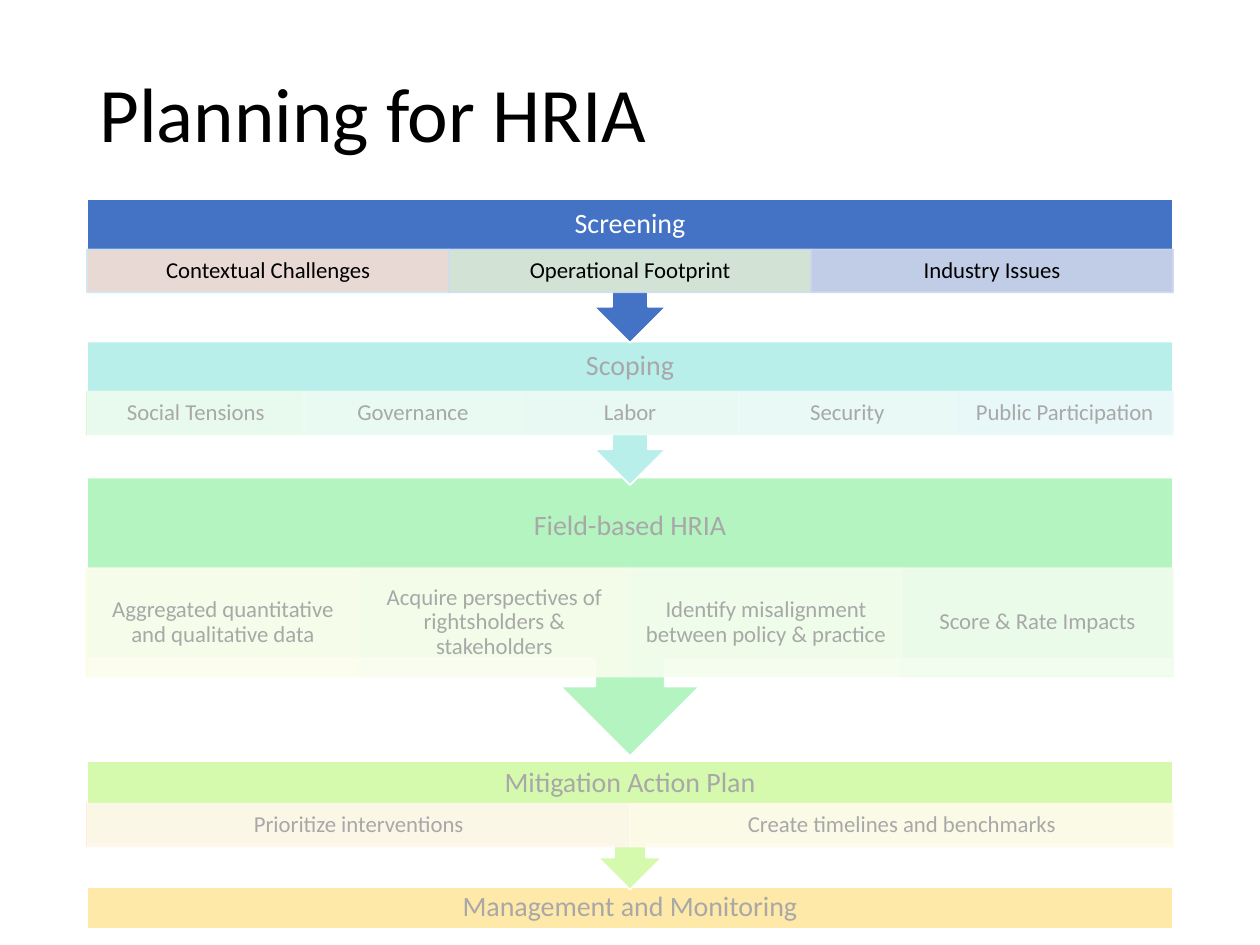
from lxml import etree
from pptx import Presentation
from pptx.dml.color import RGBColor
from pptx.enum.shapes import MSO_SHAPE
from pptx.enum.text import MSO_ANCHOR, PP_ALIGN
from pptx.oxml.ns import qn
from pptx.util import Inches, Pt

RECT = MSO_SHAPE.RECTANGLE
CALLOUT = MSO_SHAPE.UP_ARROW_CALLOUT
MIDDLE = MSO_ANCHOR.MIDDLE
LEFT_ALIGN = PP_ALIGN.LEFT
CENTER = PP_ALIGN.CENTER
LEFT, WIDTH = 0.69, 8.62


def paint(fill, color):
    fill.solid()
    fill.fore_color.rgb = RGBColor.from_string(color)


def write(sp, text, size=16, color="000000", align=CENTER, inset=(0.12, 0.12)):
    tf = sp.text_frame
    tf.word_wrap = True
    tf.vertical_anchor = MIDDLE
    tf.margin_left = tf.margin_right = Inches(inset[0])
    tf.margin_top = tf.margin_bottom = Inches(inset[1])
    p = tf.paragraphs[0]
    p.alignment = align
    p.line_spacing = 0.9
    r = p.add_run()
    r.text = text
    r.font.size = Pt(size)
    r.font.name = "Calibri"
    paint(r.font.fill, color)


prs = Presentation()
prs.slide_width, prs.slide_height = Inches(10), Inches(7.5)
s = prs.slides.add_slide(prs.slide_layouts[6])
shapes = s.shapes

title = shapes.add_textbox(Inches(LEFT), Inches(0.4), Inches(WIDTH), Inches(1.06))
write(title, "Planning for HRIA", size=44, align=LEFT_ALIGN, inset=(0.1, 0.05))

last = shapes.add_shape(RECT, Inches(LEFT), Inches(7.04), Inches(WIDTH), Inches(0.33))
last.shadow.inherit = False
paint(last.fill, "FFC000")
paint(last.line.fill, "FFFFFF")
last.line.width = Pt(1)
write(last, "Management and Monitoring")

stages = [
    ("Mitigation Action Plan", "86F011", "000000", 6.04, 1.02, 0.36, 6.38, 0.34, [
        ("Prioritize interventions", "FFE8CC", "FFE8CC"),
        ("Create timelines and benchmarks", "FEF4CC", "FEF4CC"),
    ]),
    ("Field-based HRIA", "23E148", "000000", 3.79, 2.21, 0.78, 4.51, 0.86, [
        ("Aggregated quantitative and qualitative data", "FAFCCC", "FAFCCC"),
        ("Acquire perspectives of rightsholders & stakeholders", "EDFBCC", "EDFBCC"),
        ("Identify misalignment between policy & practice", "E1FACC", "E1FACC"),
        ("Score & Rate Impacts", "D6F8CC", "D6F8CC"),
    ]),
    ("Scoping", "33D2C5", "000000", 2.71, 1.14, 0.4, 3.11, 0.34, [
        ("Social Tensions", "CCF7CE", "CCF7CE"),
        ("Governance", "CDF5D8", "CDF5D8"),
        ("Labor", "CDF3E1", "CDF3E1"),
        ("Security", "CDF2E9", "CDF2E9"),
        ("Public Participation", "CEEFF0", "CEEFF0"),
    ]),
    ("Screening", "4472C4", "FFFFFF", 1.58, 1.14, 0.4, 1.98, 0.34, [
        ("Contextual Challenges", "FBE5D6", "CEE6EE"),
        ("Operational Footprint", "E2F0D9", "CFDDEC"),
        ("Industry Issues", "CFD6EA", "CFD6EA"),
    ]),
]

translucent = []
for name, color, text_color, top, height, head_height, row_top, row_height, steps in stages:
    callout = shapes.add_shape(CALLOUT, Inches(LEFT), Inches(top), Inches(WIDTH), Inches(height))
    callout.rotation = 180
    callout.shadow.inherit = False
    paint(callout.fill, color)
    paint(callout.line.fill, "FFFFFF")
    callout.line.width = Pt(1)
    heading = shapes.add_textbox(Inches(LEFT), Inches(top), Inches(WIDTH), Inches(head_height))
    write(heading, name, color=text_color)

    step_width = WIDTH / len(steps)
    for i, (text, fill, line) in enumerate(steps):
        step = shapes.add_shape(RECT, Inches(LEFT + i * step_width), Inches(row_top),
                                Inches(step_width), Inches(row_height))
        step.shadow.inherit = False
        paint(step.fill, fill)
        paint(step.line.fill, line)
        step.line.width = Pt(1)
        write(step, text, size=13, inset=(0.1, 0.02))
        translucent.append((step, 90))

veil = shapes.add_shape(RECT, Inches(LEFT), Inches(2.71), Inches(8.71), Inches(4.67))
veil.shadow.inherit = False
paint(veil.fill, "FFFFFF")
veil.line.fill.background()
translucent.append((veil, 66))

for sp, opacity in translucent:
    for clr in sp.element.spPr.iter(qn("a:srgbClr")):
        etree.SubElement(clr, qn("a:alpha"), val=str(opacity * 1000))

prs.save("out.pptx")
